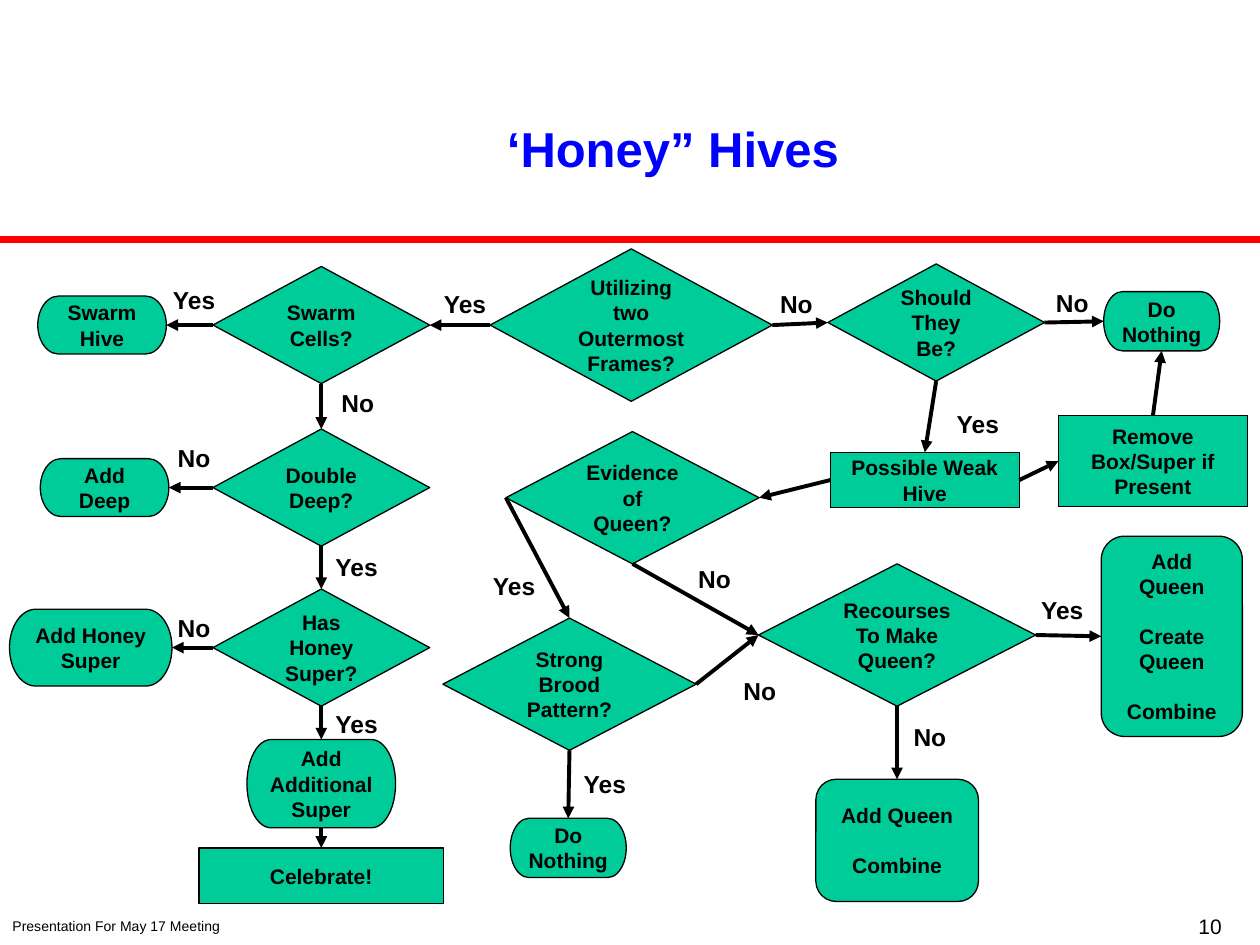
from pptx import Presentation
from pptx.dml.color import RGBColor
from pptx.enum.shapes import MSO_CONNECTOR, MSO_SHAPE
from pptx.enum.text import MSO_ANCHOR, PP_ALIGN
from pptx.oxml.ns import qn
from pptx.util import Inches, Pt
from lxml import etree

DECISION = MSO_SHAPE.FLOWCHART_DECISION
TERMINATOR = MSO_SHAPE.FLOWCHART_TERMINATOR
PROCESS = MSO_SHAPE.FLOWCHART_PROCESS
ALTERNATE = MSO_SHAPE.FLOWCHART_ALTERNATE_PROCESS
STRAIGHT = MSO_CONNECTOR.STRAIGHT
LEFT_ALIGN, CENTER, RIGHT_ALIGN = PP_ALIGN.LEFT, PP_ALIGN.CENTER, PP_ALIGN.RIGHT
MIDDLE, TOP_ANCHOR = MSO_ANCHOR.MIDDLE, MSO_ANCHOR.TOP
TOP, LEFT, BOTTOM, RIGHT = range(4)

COLORS = {"node": "00CC99", "ink": "000000", "title": "0000FF", "rule": "FF0000"}
FORMATS = {
    "title": {"size": Pt(28), "bold": True},
    "node": {"size": Pt(12), "bold": True},
    "label": {"size": Pt(14), "bold": True},
    "number": {"size": Pt(12), "bold": False},
    "footer": {"size": Pt(8), "bold": False},
}

# The grid has 100 columns and 75 rows; nodes are placed by their centres.
COLUMNS, ROWS = 100, 75
SPINE = 25.5
SMALL, MEDIUM = (17.2, 9.3), (20.1, 10.5)
PILL, WIDE_PILL, BAR = (9.2, 4.7), (10.2, 4.6), (15, 4.4)

NODES = {
    "frames": (DECISION, 50.1, 25.8, (22.4, 12.1), ["Utilizing two Outermost Frames?"]),
    "cells": (DECISION, SPINE, 25.8, SMALL, ["Swarm Cells?"]),
    "should": (DECISION, 74.3, 25.6, SMALL, ["Should They Be?"]),
    "deep": (DECISION, SPINE, 38.7, SMALL, ["Double Deep?"]),
    "honey": (DECISION, SPINE, 51.4, SMALL, ["Has Honey Super?"]),
    "queen": (DECISION, 50.2, 39.5, MEDIUM, ["Evidence of Queen?"]),
    "brood": (DECISION, 45.2, 54.3, MEDIUM, ["Strong Brood Pattern?"]),
    "recourses": (DECISION, 71.2, 50.4, (22, 11.3), ["Recourses To Make Queen?"]),
    "nothing": (TERMINATOR, 92.2, 25.5, PILL, ["Do Nothing"]),
    "brood nothing": (TERMINATOR, 45.1, 67.3, PILL, ["Do Nothing"]),
    "swarm hive": (TERMINATOR, 8.1, 25.8, WIDE_PILL, ["Swarm Hive"]),
    "add deep": (TERMINATOR, 8.3, 38.7, WIDE_PILL, ["Add Deep"]),
    "add honey": (TERMINATOR, 7.2, 51.4, (12.9, 6.1), ["Add Honey Super"]),
    "additional": (TERMINATOR, SPINE, 62.2, (11.8, 7), ["Add Additional Super"]),
    "celebrate": (PROCESS, SPINE, 69.5, (19.4, 4.4), ["Celebrate!"]),
    "weak": (PROCESS, 73.4, 38.1, BAR, ["Possible Weak Hive"]),
    "remove": (PROCESS, 91.5, 36.6, (15, 7.2), ["Remove Box/Super if Present"]),
    "options": (ALTERNATE, 93, 50.5, (11.2, 15.9), ["Add Queen", "Create Queen", "Combine"]),
    "combine": (ALTERNATE, 71.2, 66.7, (12.9, 9.7), ["Add Queen", "Combine"]),
}

# start, its side, end, its side, then the answer and its centre if there is one
LINKS = [
    ("frames", LEFT, "cells", RIGHT, ("Yes", 36.9, 24.1)),
    ("frames", RIGHT, "should", LEFT, ("No", 63.2, 24.1)),
    ("should", RIGHT, "nothing", LEFT, ("No", 85.1, 24)),
    ("should", BOTTOM, "weak", TOP, ("Yes", 77.6, 33.6)),
    ("weak", LEFT, "queen", RIGHT, None),
    ("weak", RIGHT, "remove", LEFT, None),
    ("remove", TOP, "nothing", BOTTOM, None),
    ("cells", LEFT, "swarm hive", RIGHT, ("Yes", 15.4, 23.8)),
    ("cells", BOTTOM, "deep", TOP, ("No", 28.4, 32)),
    ("deep", LEFT, "add deep", RIGHT, ("No", 15.4, 36.3)),
    ("deep", BOTTOM, "honey", TOP, ("Yes", 28.3, 45)),
    ("honey", LEFT, "add honey", RIGHT, ("No", 15.4, 49.8)),
    ("honey", BOTTOM, "additional", TOP, ("Yes", 28.3, 57.4)),
    ("additional", BOTTOM, "celebrate", TOP, None),
    ("queen", LEFT, "brood", TOP, ("Yes", 40.8, 46.5)),
    ("queen", BOTTOM, "recourses", LEFT, ("No", 56.7, 45.9)),
    ("brood", RIGHT, "recourses", LEFT, ("No", 60.3, 54.8)),
    ("brood", BOTTOM, "brood nothing", TOP, ("Yes", 48, 62.2)),
    ("recourses", RIGHT, "options", LEFT, ("Yes", 84.3, 48.4)),
    ("recourses", BOTTOM, "combine", TOP, ("No", 73.8, 58.5)),
]


class FlowSlide:
    def __init__(self, presentation):
        self.slide = presentation.slides.add_slide(presentation.slide_layouts[6])
        self.column = presentation.slide_width / COLUMNS
        self.row = presentation.slide_height / ROWS

    def place(self, x, y):
        return round(x * self.column), round(y * self.row)

    def centered(self, x, y, size):
        """Left, top, width and height of a box around a centre."""
        width, height = size
        return *self.place(x - width / 2, y - height / 2), *self.place(width, height)

    def fill_text(self, shape, lines, style, align=CENTER, anchor=MIDDLE, color="ink"):
        frame = shape.text_frame
        frame.word_wrap = True
        frame.vertical_anchor = anchor
        for index, line in enumerate(lines):
            paragraph = frame.add_paragraph() if index else frame.paragraphs[0]
            paragraph.text = line
            paragraph.alignment = align
            if index:
                paragraph.space_before = Pt(14)
            font = paragraph.runs[0].font
            for name, value in {"name": "Arial", **FORMATS[style]}.items():
                setattr(font, name, value)
            font.color.rgb = RGBColor.from_string(COLORS[color])

    def text(self, box, content, style, **options):
        shape = self.slide.shapes.add_textbox(*box)
        self.fill_text(shape, [content], style, **options)
        return shape

    def node(self, kind, x, y, size, lines):
        shape = self.slide.shapes.add_shape(kind, *self.centered(x, y, size))
        shape.shadow.inherit = False
        shape.fill.solid()
        shape.fill.fore_color.rgb = RGBColor.from_string(COLORS["node"])
        shape.line.color.rgb = RGBColor.from_string(COLORS["ink"])
        shape.line.width = Pt(0.75)
        self.fill_text(shape, lines, "node")
        return shape

    def line(self, start, end, color, width):
        connector = self.slide.shapes.add_connector(STRAIGHT, *start, *end)
        connector.line.color.rgb = RGBColor.from_string(COLORS[color])
        connector.line.width = Pt(width)
        etree.SubElement(connector._element.spPr, qn("a:effectLst"))
        return connector

    def arrow(self, start, start_side, end, end_side):
        connector = self.line((0, 0), (0, 0), "ink", 2.25)
        connector.begin_connect(start, start_side)
        connector.end_connect(end, end_side)
        outline = connector._element.spPr.find(qn("a:ln"))
        etree.SubElement(outline, qn("a:tailEnd"), type="triangle")


def main():
    presentation = Presentation()
    presentation.slide_width, presentation.slide_height = Inches(10), Inches(7.5)
    flow = FlowSlide(presentation)

    flow.line(flow.place(0, 19), flow.place(COLUMNS, 19), "rule", 4)
    title = flow.text(flow.centered(53.4, 12, (70.9, 7.5)), "‘Honey” Hives", "title", color="title")
    title.text_frame.paragraphs[0].line_spacing = Pt(30)
    flow.text(flow.centered(80.2, 73.5, (35.5, 3)), "10", "number",
              align=RIGHT_ALIGN, anchor=TOP_ANCHOR)
    flow.text(flow.centered(13.9, 73.5, (27.8, 2.4)), "Presentation For May 17 Meeting",
              "footer", align=LEFT_ALIGN, anchor=TOP_ANCHOR)

    nodes = {name: flow.node(*node) for name, node in NODES.items()}
    for start, start_side, end, end_side, answer in LINKS:
        flow.arrow(nodes[start], start_side, nodes[end], end_side)
        if answer:
            label, x, y = answer
            flow.text(flow.centered(x, y, (5.9, 3.4)), label, "label")

    presentation.save("out.pptx")


if __name__ == "__main__":
    main()
